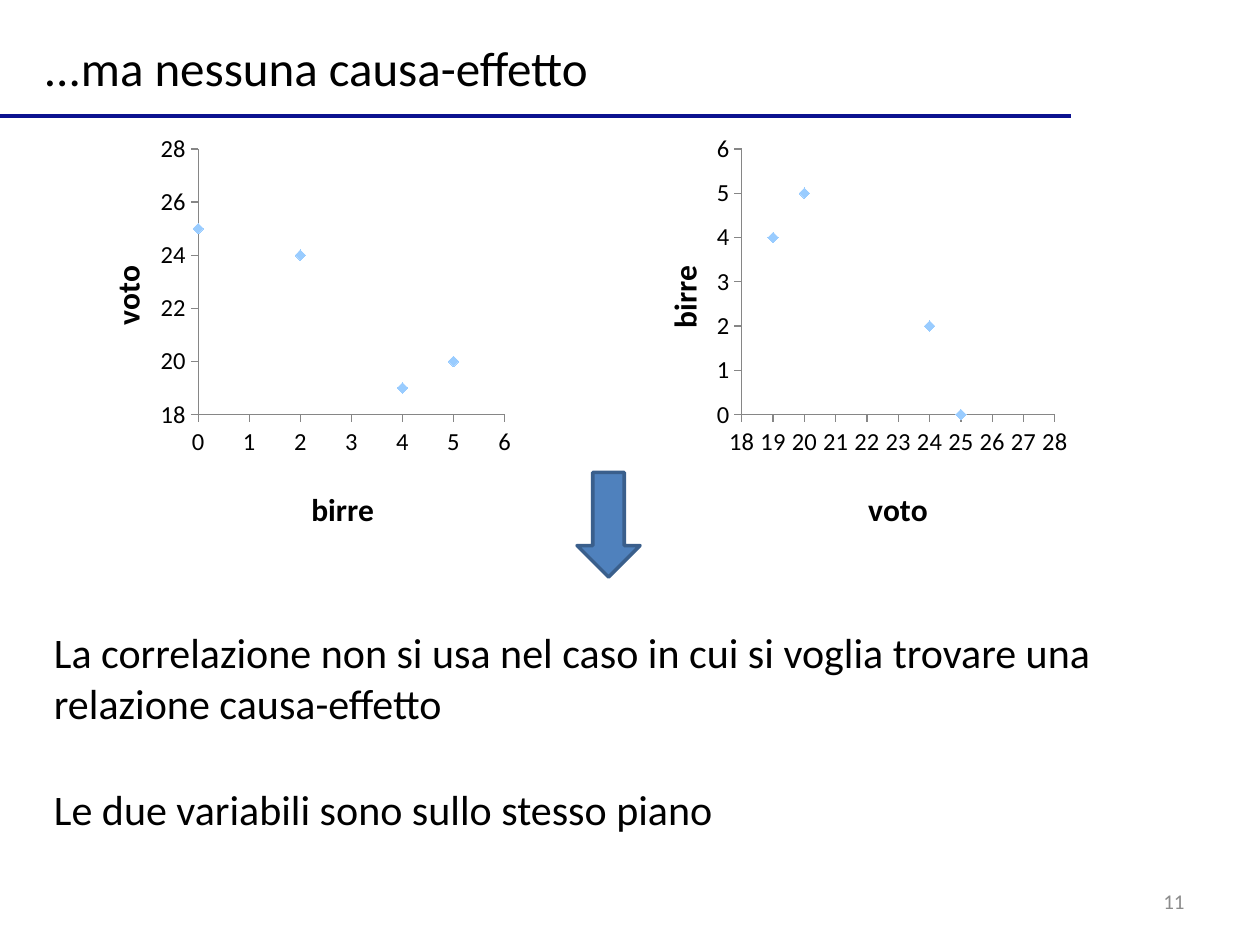
from lxml import etree
from pptx import Presentation
from pptx.chart.data import XyChartData
from pptx.dml.color import RGBColor
from pptx.enum.chart import XL_CHART_TYPE, XL_MARKER_STYLE, XL_TICK_MARK
from pptx.enum.shapes import MSO_CONNECTOR, MSO_SHAPE
from pptx.enum.text import MSO_ANCHOR, PP_ALIGN
from pptx.oxml import parse_xml
from pptx.oxml.ns import nsdecls, qn
from pptx.util import Inches, Pt

SCATTER = XL_CHART_TYPE.XY_SCATTER
DIAMOND = XL_MARKER_STYLE.DIAMOND
OUT, NONE = XL_TICK_MARK.OUTSIDE, XL_TICK_MARK.NONE
LINE, ARROW = MSO_CONNECTOR.STRAIGHT, MSO_SHAPE.DOWN_ARROW
MIDDLE = MSO_ANCHOR.MIDDLE
LEFT, RIGHT = PP_ALIGN.LEFT, PP_ALIGN.RIGHT

THEME = {
    "font": "Calibri",
    "size": {"title": 28, "body": 24, "axis": 18, "tick": 14, "page": 12},
    "color": {"text": "000000", "page": "8C8C8C", "rule": "0C1290", "dot": "99CCFF",
              "arrow": "4F81BD", "edge": "3A5F8C", "axis": "868686"},
}

TEXTS = [
    ("...ma nessuna causa-effetto", (0.25, 0.25, 4.58, 0.57), "title", "text", LEFT, False),
    ("La correlazione non si usa nel caso in cui si voglia trovare una relazione causa-effetto",
     (0.33, 4.92, 9.33, 0.91), "body", "text", LEFT, True),
    ("Le due variabili sono sullo stesso piano", (0.33, 6.17, 8.75, 0.5),
     "body", "text", LEFT, True),
    ("11", (7.17, 6.95, 2.33, 0.4), "page", "page", RIGHT, True),
]

DATA = {"birre": [5, 4, 2, 0], "voto": [20, 19, 24, 25]}
SCALES = {"birre": (0, 6, 1), "voto": (18, 28, 2)}
CHARTS = [
    {"x": "birre", "y": "voto", "left": 0.58, "step": 1, "plot": (0.28, 0.055, 0.685, 0.635)},
    {"x": "voto", "y": "birre", "left": 5, "step": 1, "plot": (0.25, 0.055, 0.7, 0.635)},
]
SPOTS = {"x": (0.52, 0.85), "y": (0.06, 0.32)}


def tint(name):
    return RGBColor.from_string(THEME["color"][name])


def apply(item, values):
    for key, value in values.items():
        setattr(item, key, value)


def style(font, size, color="text", bold=False):
    apply(font, {"name": THEME["font"], "size": Pt(THEME["size"][size]), "bold": bold})
    font.color.rgb = tint(color)


def stroke(line, color, width):
    line.color.rgb = tint(color)
    line.width = Pt(width)


def place(parent, index, spot, inner=False):
    for old in parent.findall(qn("c:layout")):
        parent.remove(old)
    modes = [("xMode", "edge"), ("yMode", "edge")]
    if inner:
        modes.insert(0, ("layoutTarget", "inner"))
    tags = "".join(f'<c:{key} val="{value}"/>' for key, value in modes + list(zip("xywh", spot)))
    layout = f'<c:layout {nsdecls("c")}><c:manualLayout>{tags}</c:manualLayout></c:layout>'
    parent.insert(index, parse_xml(layout))


def add_text(slide, text, box, size, color, align, wrap):
    frame = slide.shapes.add_textbox(*map(Inches, box)).text_frame
    apply(frame, {"word_wrap": wrap, "vertical_anchor": MIDDLE})
    para = frame.paragraphs[0]
    para.alignment = align
    run = para.add_run()
    run.text = text
    style(run.font, size, color)


def set_axis(axis, name, step, spot):
    low, high, _ = SCALES[name]
    apply(axis, {"minimum_scale": low, "maximum_scale": high, "major_unit": step,
                 "has_major_gridlines": False, "major_tick_mark": OUT,
                 "minor_tick_mark": NONE})
    stroke(axis.format.line, "axis", 0.75)
    style(axis.tick_labels.font, "tick")
    title = axis.axis_title
    run = title.text_frame.paragraphs[0].add_run()
    run.text = name
    style(run.font, "axis", bold=True)
    place(title._element, 1, spot)


def add_scatter(slide, x, y, left, step, plot):
    data = XyChartData()
    points = data.add_series("Series 1")
    for pair in zip(DATA[x], DATA[y]):
        points.add_data_point(*pair)
    box = map(Inches, (left, 1, 3.55, 3.32))
    chart = slide.shapes.add_chart(SCATTER, *box, data).chart
    apply(chart, {"has_legend": False, "has_title": False})
    style(chart.font, "tick")
    chart.plots[0].vary_by_categories = False
    series = chart.plots[0].series[0]
    series.smooth = False
    series.format.line.fill.background()
    apply(series.marker, {"style": DIAMOND, "size": 6})
    series.marker.format.fill.solid()
    series.marker.format.fill.fore_color.rgb = tint("dot")
    series.marker.format.line.fill.background()
    set_axis(chart.category_axis, x, step, SPOTS["x"])
    set_axis(chart.value_axis, y, SCALES[y][2], SPOTS["y"])
    place(chart._chartSpace.chart.plotArea, 0, plot, True)


def main():
    deck = Presentation()
    apply(deck, {"slide_width": Inches(10), "slide_height": Inches(7.5)})
    slide = deck.slides.add_slide(deck.slide_layouts[6])

    rule = slide.shapes.add_connector(LINE, *map(Inches, (0, 0.92, 8.5, 0.92)))
    stroke(rule.line, "rule", 2)
    etree.SubElement(rule._element.spPr, qn("a:effectLst"))

    for item in CHARTS:
        add_scatter(slide, **item)

    arrow = slide.shapes.add_shape(ARROW, *map(Inches, (4.58, 3.75, 0.5, 0.83)))
    arrow.shadow.inherit = False
    arrow.fill.solid()
    arrow.fill.fore_color.rgb = tint("arrow")
    stroke(arrow.line, "edge", 2)

    for item in TEXTS:
        add_text(slide, *item)

    deck.save("out.pptx")


if __name__ == "__main__":
    main()
